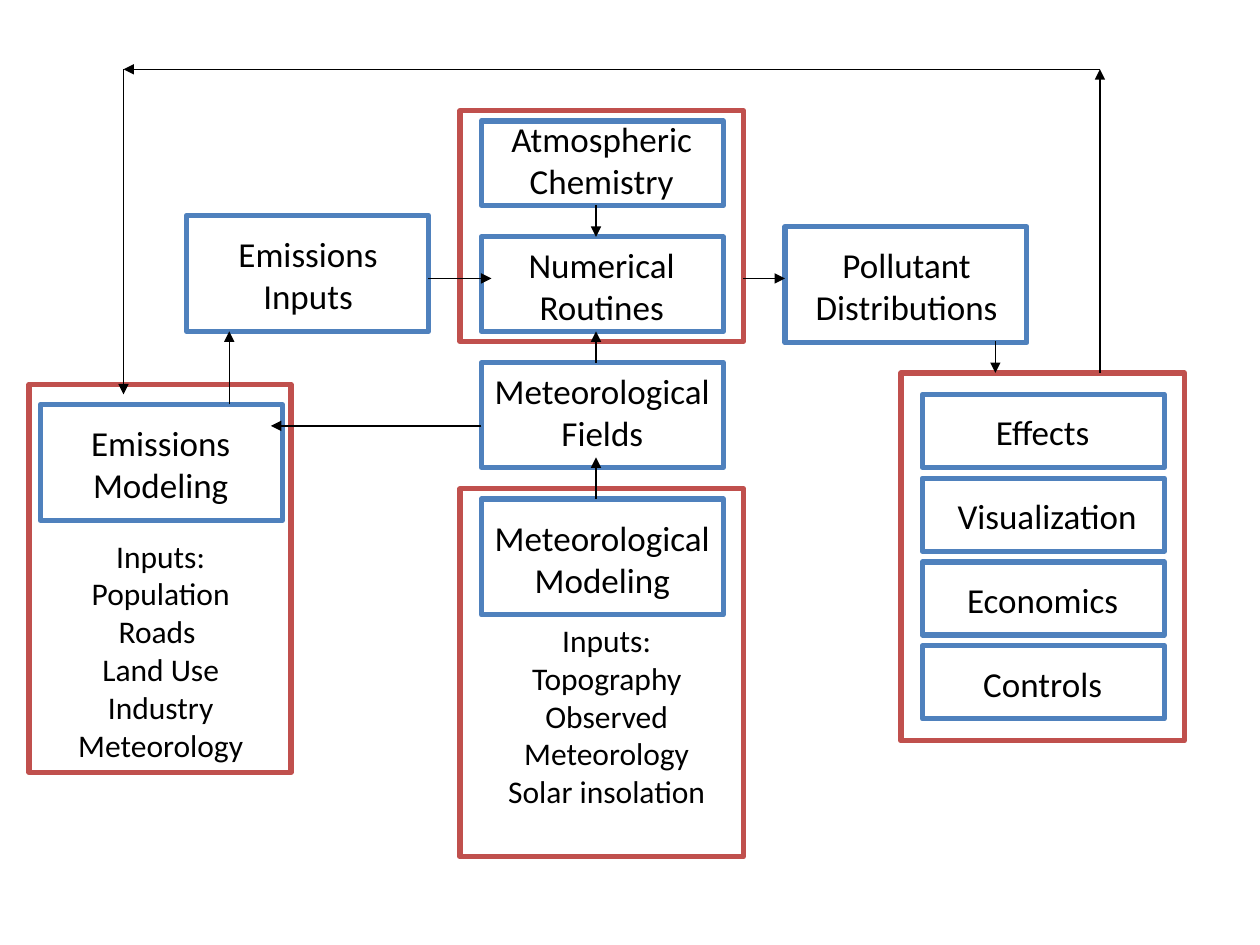
"""Build a flow diagram of an air quality modeling system."""
from typing import NamedTuple

from lxml.etree import SubElement
from pptx import Presentation
from pptx.dml.color import RGBColor
from pptx.enum.shapes import MSO_CONNECTOR, MSO_SHAPE
from pptx.enum.text import MSO_AUTO_SIZE, PP_ALIGN
from pptx.oxml.ns import qn
from pptx.util import Inches, Pt

BLUE = RGBColor(0x4F, 0x81, 0xBD)
RED = RGBColor(0xC0, 0x50, 0x4D)
BLACK = RGBColor(0, 0, 0)
BOX_WIDTH = 1.92


class Frame(NamedTuple):
    left: float
    top: float
    width: float
    height: float


class Label(NamedTuple):
    text: str
    left: float
    top: float
    width: float = 1.75
    height: float = 0.77
    size: int = 20


class Arrow(NamedTuple):
    start: tuple[float, float]
    end: tuple[float, float]


OUTPUTS = ["Effects", "Visualization", "Economics", "Controls"]
OUTPUT_TOP, OUTPUT_STEP = 3.13, 0.665

STAGES = [
    Frame(1.48, 1.71, BOX_WIDTH, 0.92),
    Frame(3.82, 2.88, BOX_WIDTH, 0.83),
    Frame(6.23, 1.8, BOX_WIDTH, 0.92),
    Frame(0.32, 3.21, BOX_WIDTH, 0.92),
    Frame(3.82, 3.96, BOX_WIDTH, 0.92),
    Frame(3.82, 1.88, BOX_WIDTH, 0.75),
    Frame(3.82, 0.96, BOX_WIDTH, 0.67),
] + [Frame(7.32, OUTPUT_TOP + row * OUTPUT_STEP, BOX_WIDTH, 0.58) for row in range(len(OUTPUTS))]

GROUPS = [
    Frame(0.23, 3.05, 2.08, 3.08),
    Frame(3.65, 0.88, 2.25, 1.83),
    Frame(3.65, 3.88, 2.25, 2.92),
    Frame(7.15, 2.96, 2.25, 2.92),
]

LABELS = [
    Label("Emissions Modeling", 0.4, 3.3),
    Label("Pollutant Distributions", 6.32, 1.88),
    Label("Meteorological Fields", 3.82, 2.88, BOX_WIDTH),
    Label("Numerical Routines", 3.9, 1.88),
    Label("Atmospheric Chemistry", 3.9, 0.88),
    Label("Meteorological Modeling", 3.82, 4.05, BOX_WIDTH),
    Label("Emissions Inputs", 1.57, 1.8),
    Label("Inputs:\vPopulation Roads \vLand Use Industry Meteorology", 0.4, 4.21, 1.75, 1.9, 18),
    Label("Inputs:\vTopography Observed Meteorology Solar insolation", 3.9, 4.88, 1.83, 1.92, 18),
] + [
    Label(name, 7.4, OUTPUT_TOP + 0.08 + row * OUTPUT_STEP,
          1.82 if name == "Visualization" else 1.75, 0.43)
    for row, name in enumerate(OUTPUTS)
]

ARROWS = [
    Arrow((3.82, 3.38), (2.15, 3.38)),
    Arrow((4.73, 3.96), (4.73, 3.63)),
    Arrow((4.73, 2.88), (4.73, 2.63)),
    Arrow((4.73, 1.63), (4.73, 1.88)),
    Arrow((1.82, 3.21), (1.82, 2.63)),
    Arrow((3.4, 2.21), (3.9, 2.21)),
    Arrow((5.9, 2.21), (6.23, 2.21)),
    Arrow((7.9, 2.71), (7.9, 2.96)),
    Arrow((8.73, 2.96), (8.73, 0.55)),
    Arrow((8.73, 0.55), (0.98, 0.55)),
    Arrow((0.98, 0.55), (0.98, 3.13)),
]


def draw_frame(page, frame: Frame, color: RGBColor) -> None:
    box = page.shapes.add_shape(MSO_SHAPE.RECTANGLE, *map(Inches, frame))
    box.shadow.inherit = False
    box.fill.background()
    box.line.color.rgb = color
    box.line.width = Pt(3)


def write_text(para, text: str, *, size: int, color: RGBColor = BLACK, font: str = "Calibri") -> None:
    para.text = text
    para.alignment = PP_ALIGN.CENTER
    para._p.get_or_add_pPr().set("rtl", "1")
    for span in para.runs:
        span.font.name = font
        span.font.size = Pt(size)
        span.font.color.rgb = color


def draw_label(page, label: Label) -> None:
    box = page.shapes.add_textbox(
        Inches(label.left), Inches(label.top), Inches(label.width), Inches(label.height))
    box.text_frame.word_wrap = True
    box.text_frame.auto_size = MSO_AUTO_SIZE.SHAPE_TO_FIT_TEXT
    write_text(box.text_frame.paragraphs[0], label.text, size=label.size)


def draw_arrow(page, arrow: Arrow) -> None:
    line = page.shapes.add_connector(
        MSO_CONNECTOR.STRAIGHT, *map(Inches, arrow.start + arrow.end))
    line.line.color.rgb = BLACK
    line.line.width = Pt(0.75)
    SubElement(line.line._get_or_add_ln(), qn("a:tailEnd"), type="triangle")
    SubElement(line._element.spPr, qn("a:effectLst"))


def main() -> None:
    deck = Presentation()
    deck.slide_width, deck.slide_height = Inches(10), Inches(7.5)
    page = deck.slides.add_slide(deck.slide_layouts[6])
    for frame in STAGES:
        draw_frame(page, frame, BLUE)
    for frame in GROUPS:
        draw_frame(page, frame, RED)
    for label in LABELS:
        draw_label(page, label)
    for arrow in ARROWS:
        draw_arrow(page, arrow)
    deck.save("out.pptx")


if __name__ == "__main__":
    main()
